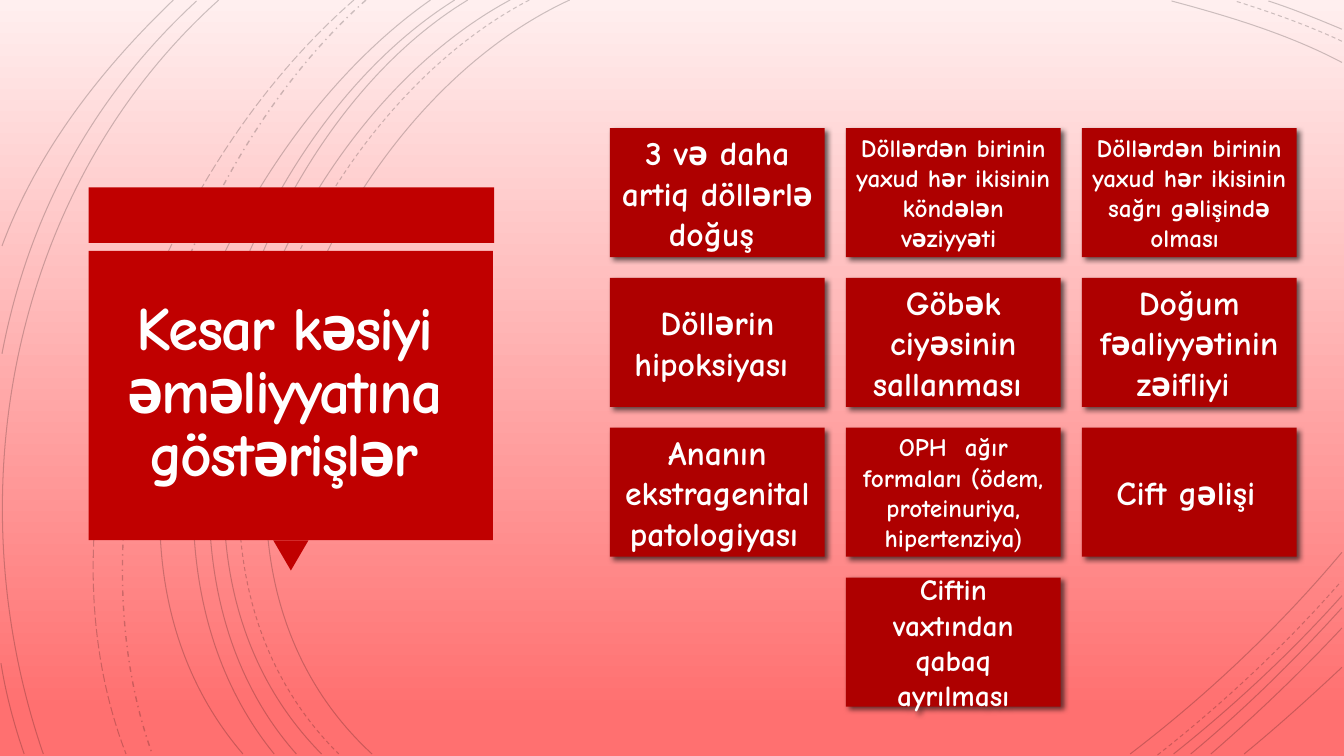
from lxml import etree
from pptx import Presentation
from pptx.dml.color import RGBColor
from pptx.enum.dml import MSO_LINE_DASH_STYLE as Dash
from pptx.enum.shapes import MSO_SHAPE as Preset
from pptx.enum.text import MSO_ANCHOR as Anchor, MSO_AUTO_SIZE as AutoSize, PP_ALIGN as Align
from pptx.oxml.ns import qn
from pptx.util import Inches, Pt

COLORS = {
    "sky": "FFEFEF",
    "ground": "FF7070",
    "panel": "C00000",
    "tile": "AE0000",
    "text": "FFFFFF",
    "ink": "000000",
}
HEADING_FONT = "Comic Neue"
BODY_FONT = "Roboto Slab"


def add_block(preset, left, top, width, height, color):
    block = shapes.add_shape(preset, Inches(left), Inches(top), Inches(width), Inches(height))
    block.shadow.inherit = False
    block.fill.solid()
    block.fill.fore_color.rgb = RGBColor.from_string(COLORS[color])
    block.line.fill.background()
    return block


def write_centred(frame, inset, runs):
    frame.word_wrap = True
    frame.auto_size = AutoSize.NONE
    frame.vertical_anchor = Anchor.MIDDLE
    frame.margin_left = frame.margin_right = Inches(inset)
    frame.margin_top = frame.margin_bottom = Inches(inset)
    paragraph = frame.paragraphs[0]
    paragraph.alignment = Align.CENTER
    for words, size, font in runs:
        run = paragraph.add_run()
        run.text = words
        run.font.size = Pt(size)
        run.font.name = font
        run.font.bold = font == HEADING_FONT
        run.font.color.rgb = RGBColor.from_string(COLORS["text"])
    return paragraph


deck = Presentation()
deck.slide_width = Inches(13.33)
deck.slide_height = Inches(7.5)
slide = deck.slides.add_slide(deck.slide_layouts[5])
shapes = slide.shapes

backdrop = slide.background.fill
backdrop.gradient()
backdrop.gradient_angle = 270
for stop, position, color in zip(backdrop.gradient_stops, (0, 0.94), ("sky", "ground")):
    stop.position = position
    stop.color.rgb = RGBColor.from_string(COLORS[color])

arcs = [
    ((5.65, 0), (3.15, 1.15), (1.43, 5.4), (3.69, 7.48), Dash.SOLID),
    ((13.31, 0.62), (12.78, 0.34), (12.18, 0.16), (11.62, 0.01), Dash.SOLID),
    ((11.21, 7.48), (11.97, 6.9), (12.69, 6.22), (13.31, 5.48), Dash.SOLID),
    ((5.25, 0), (2.85, 1.25), (1.23, 5.37), (3.36, 7.48), Dash.DASH),
    ((13.31, 0.41), (12.97, 0.25), (12.6, 0.12), (12.25, 0.01), Dash.DASH),
    ((11.48, 7.49), (12.13, 6.98), (12.75, 6.4), (13.3, 5.77), Dash.DASH),
    ((5.06, 0), (2.7, 1.27), (1.1, 5.37), (3.19, 7.48), Dash.SOLID),
    ((13.31, 0.29), (13.07, 0.19), (12.83, 0.09), (12.58, 0.01), Dash.SOLID),
    ((11.64, 7.48), (12.23, 7.01), (12.8, 6.48), (13.31, 5.91), Dash.SOLID),
    ((4.64, 0), (2.44, 1.33), (1.1, 5.41), (2.94, 7.48), Dash.SOLID),
    ((11.81, 7.48), (12.34, 7.04), (12.84, 6.55), (13.31, 6.03), Dash.SOLID),
    ((4.51, 0), (2.31, 1.38), (0.97, 5.33), (2.72, 7.48), Dash.SOLID),
    ((12.01, 7.48), (12.46, 7.09), (12.9, 6.67), (13.31, 6.23), Dash.SOLID),
    ((4.27, 0), (2.17, 1.47), (0.53, 5.29), (2.41, 7.48), Dash.SOLID),
    ((12.34, 7.48), (12.67, 7.21), (12.99, 6.92), (13.31, 6.62), Dash.SOLID),
    ((3.63, 0), (1.76, 1.66), (0.65, 5.09), (1.51, 7.48), Dash.DASH_DOT),
    ((3.51, 0), (1.57, 1.69), (0.29, 4.99), (1.25, 7.48), Dash.LONG_DASH),
    ((2.17, 0), (0.11, 1.85), (-0.46, 4.9), (0.43, 7.48), Dash.SOLID),
    ((1.95, 0.01), (0.92, 0.96), (0.28, 2.14), (0.02, 3.51), Dash.SOLID),
    ((0.01, 6.58), (0.06, 6.89), (0.14, 7.19), (0.24, 7.48), Dash.SOLID),
    ((1.72, 0), (1, 0.69), (0.37, 1.5), (0.02, 2.44), Dash.SOLID),
]
for *corners, dash in arcs:
    start, *pulls_and_end = [(Inches(x), Inches(y)) for x, y in corners]
    outline = shapes.build_freeform(*start)
    outline.add_line_segments(pulls_and_end, close=False)
    arc = outline.convert_to_shape()
    segments = list(arc.element.spPr.iter(qn("a:lnTo")))
    curve = etree.SubElement(segments[0].getparent(), qn("a:cubicBezTo"))
    for segment in segments:
        curve.append(segment[0])
        segment.getparent().remove(segment)
    arc.shadow.inherit = False
    arc.fill.background()
    arc.line.width = Pt(1 if dash == Dash.DASH_DOT else 0.75)
    arc.line.color.rgb = RGBColor.from_string(COLORS["ink"])
    arc.line.dash_style = dash
    ink = arc.element.spPr.find(qn("a:ln")).find(".//" + qn("a:srgbClr"))
    etree.SubElement(ink, qn("a:alpha"), val="20000")

add_block(Preset.RECTANGLE, 0.88, 1.86, 4.02, 0.55, "panel")
pointer = add_block(Preset.ISOSCELES_TRIANGLE, 2.71, 5.36, 0.35, 0.3, "panel")
pointer.rotation = 180
add_block(Preset.RECTANGLE, 0.88, 2.49, 4.01, 2.87, "panel")

title = shapes.title
title.left, title.top, title.width, title.height = map(Inches, (0.83, 2.57, 3.97, 2.69))
heading = write_centred(title.text_frame, 0.25, [("Kesar kəsiyi əməliyyatına göstərişlər", 44, HEADING_FONT)])
heading.line_spacing = 0.85
heading.runs[0].font._element.set("spc", "-150")
shapes.element.append(title.element)

indications = [
    ("3 və daha artiq döllərlə doğuş ", 24, None),
    ("Döllərdən birinin yaxud hər ikisinin köndələn vəziyyəti ", 18, None),
    ("Döllərdən birinin yaxud hər ikisinin sağrı gəlişində olması ", 18, None),
    ("Döllərin hipoksiyası ", 24, None),
    ("Göbək ciyəsinin sallanması ", 24, None),
    ("Doğum fəaliyyətinin zəifliyi ", 24, None),
    ("Ananın ekstragenital patologiyası", 24, (" ", 18, BODY_FONT)),
    ("OPH  ağır formaları (ödem, proteinuriya, hipertenziya", 18, (")", 17, BODY_FONT)),
    ("Cift gəlişi", 24, (" ", 19, BODY_FONT)),
    ("Ciftin vaxtından qabaq ayrılması", 21, None),
]
row_pitch = (5.73 - 1.27) / 3
for index, (words, size, ending) in enumerate(indications):
    row, column = divmod(index, 3)
    if index == len(indications) - 1:
        column = 1
    tile = add_block(Preset.RECTANGLE, 6.05 + 2.34 * column, 1.27 + row_pitch * row, 2.13, 1.28, "tile")
    effects = tile.element.spPr.find(qn("a:effectLst"))
    shadow = etree.SubElement(
        effects, qn("a:outerShdw"), blurRad=str(Pt(4)), dist=str(Pt(3)), dir="2700000", algn="tl", rotWithShape="0"
    )
    shade = etree.SubElement(shadow, qn("a:srgbClr"), val=COLORS["ink"])
    etree.SubElement(shade, qn("a:alpha"), val="60000")
    runs = [(words, size, HEADING_FONT)]
    if ending:
        runs.append(ending)
    write_centred(tile.text_frame, size / 240, runs)

deck.save("out.pptx")
